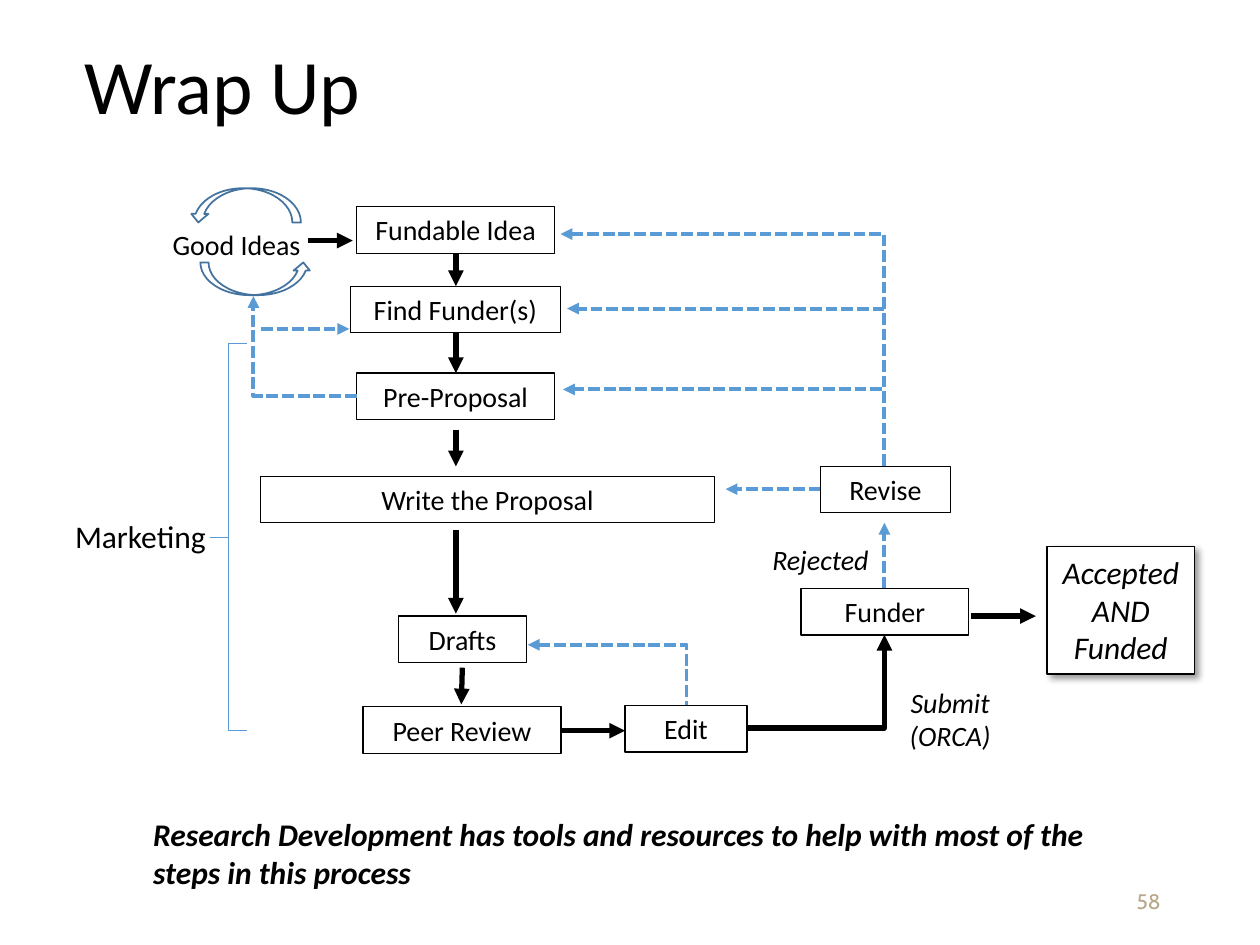
from lxml import etree
from pptx import Presentation
from pptx.dml.color import RGBColor
from pptx.enum.dml import MSO_LINE
from pptx.enum.shapes import MSO_CONNECTOR, MSO_SHAPE
from pptx.enum.text import MSO_ANCHOR, MSO_AUTO_SIZE, PP_ALIGN
from pptx.oxml import parse_xml
from pptx.oxml.ns import qn
from pptx.util import Cm, Pt

RECT, BRACE, ARC = MSO_SHAPE.RECTANGLE, MSO_SHAPE.LEFT_BRACE, MSO_SHAPE.CURVED_RIGHT_ARROW
STRAIGHT, ELBOW = MSO_CONNECTOR.STRAIGHT, MSO_CONNECTOR.ELBOW
DASH = MSO_LINE.SQUARE_DOT
TOP, MID = MSO_ANCHOR.TOP, MSO_ANCHOR.MIDDLE
LEFT, MIDDLE, RIGHT = PP_ALIGN.LEFT, PP_ALIGN.CENTER, PP_ALIGN.RIGHT
GROW, FIXED = MSO_AUTO_SIZE.SHAPE_TO_FIT_TEXT, MSO_AUTO_SIZE.NONE

BLACK, WHITE, BLUE, NAVY, TAN = "000000", "FFFFFF", "5B9BD5", "43739E", "B5A788"
SHADOW = (
    '<a:effectLst xmlns:a="http://schemas.openxmlformats.org/drawingml/2006/main">'
    '<a:outerShdw blurRad="50800" dist="38100" dir="2700000" algn="tl" rotWithShape="0">'
    '<a:srgbClr val="000000"><a:alpha val="40000"/></a:srgbClr>'
    '</a:outerShdw></a:effectLst>')


def color(code):
    return RGBColor.from_string(code)


class Flow:
    """Style and current slide, with one method per kind of element."""
    font = "Calibri"
    size = 16
    row = 0.94

    def __init__(self, slide):
        self.slide = slide
        self.shapes = slide.shapes

    def text(self, shape, words, align=MIDDLE, ink=BLACK, anchor=TOP,
             fit=GROW, wrap=True, space=None, **style):
        frame = shape.text_frame
        frame.word_wrap, frame.auto_size = wrap, fit
        frame.vertical_anchor = anchor
        para = frame.paragraphs[0]
        para.alignment, para.line_spacing = align, space
        run = para.add_run()
        run.text = words
        style = {"name": self.font, "size": self.size, **style}
        style["size"] = Pt(style["size"])
        for key, value in style.items():
            setattr(run.font, key, value)
        run.font.color.rgb = color(ink)

    def label(self, words, x, y, wide, high=row, **style):
        box = self.shapes.add_textbox(Cm(x), Cm(y), Cm(wide), Cm(high))
        self.text(box, words, **style)

    def shape(self, kind, x, y, wide, high, line=BLACK, width=0.75, fill=None, turn=0):
        item = self.shapes.add_shape(kind, Cm(x), Cm(y), Cm(wide), Cm(high))
        item.shadow.inherit = False
        item.rotation = turn
        if fill:
            item.fill.solid()
            item.fill.fore_color.rgb = color(fill)
        else:
            item.fill.background()
        if line:
            item.line.color.rgb = color(line)
            item.line.width = Pt(width)
        else:
            item.line.fill.background()
        return item

    def box(self, words, x, y, wide, high=row, style=None, **look):
        item = self.shape(RECT, x, y, wide, high, **look)
        self.text(item, words, **(style or {}))
        return item

    def arrow(self, x1, y1, x2, y2, dashed=False, bent=False, end="tailEnd"):
        kind = ELBOW if bent else STRAIGHT
        link = self.shapes.add_connector(kind, Cm(x1), Cm(y1), Cm(x2), Cm(y2))
        link.line.color.rgb = color(BLUE if dashed else BLACK)
        link.line.width = Pt(2.25 if dashed else 3)
        if dashed:
            link.line.dash_style = DASH
        props = link._element.spPr
        if bent:  # a single corner: across first, then up or down
            props.find(qn("a:prstGeom")).set("prst", "bentConnector2")
        etree.SubElement(props.find(qn("a:ln")), qn("a:" + end), type="triangle")
        etree.SubElement(props, qn("a:effectLst"))


def main():
    deck = Presentation()
    deck.slide_width, deck.slide_height = Cm(25.4), Cm(19.05)
    flow = Flow(deck.slides.add_slide(deck.slide_layouts[6]))

    # Title and page number
    flow.label("Wrap Up", 1.45, 0.64, 21.89, 2.34, align=LEFT, size=44,
               anchor=MID, fit=FIXED, space=0.9)
    flow.label("58", 17.93, 17.65, 5.72, 1.02, align=RIGHT, size=12,
               name="Cabin", ink=TAN, anchor=MID, fit=FIXED)

    # Cycle of ideas
    flow.shape(ARC, 4.83, 4.5, 0.66, 2.24, line=NAVY, width=1, turn=270)
    flow.shape(ARC, 4.6, 3.02, 0.69, 2.24, line=NAVY, width=1, turn=90)
    flow.label("Good Ideas", 3.23, 4.47, 3.4, align=LEFT)

    # Steps
    for words, x, y, wide, look in (
            ("Fundable Idea", 7.19, 4.17, 3.99, {}),
            ("Find Funder(s)", 7.06, 5.77, 4.24, {}),
            ("Pre-Proposal", 7.19, 7.52, 3.99, {"width": 1}),
            ("Write the Proposal", 5.26, 9.6, 9.14, {"width": 0.5}),
            ("Drafts", 8.03, 12.42, 2.59, {}),
            ("Peer Review", 7.32, 14.25, 3.99, {}),
            ("Edit", 12.6, 14.22, 2.46, {}),
            ("Funder", 16.15, 11.86, 3.38, {"fill": WHITE}),
            ("Revise", 16.54, 9.4, 2.62, {})):
        flow.box(words, x, y, wide, **look)

    # Outcomes
    slant = {"italic": True}
    flow.box("Submit (ORCA)", 17.96, 13.69, 2.39, 1.63, slant, line=None, fill=WHITE)
    flow.label("Rejected", 14.38, 10.82, 4.32, **slant)
    goal = flow.box("Accepted AND Funded", 21.11, 11.02, 2.97, 2.57,
                    {"size": 18, **slant}, fill=WHITE)
    props = goal._element.spPr
    props.remove(props.find(qn("a:effectLst")))
    props.append(parse_xml(SHADOW))

    # Forward arrows: down the spine, then across
    spine, loop = 9.19, 17.83
    for top, foot in ((5.11, 5.77), (6.71, 7.52), (8.66, 9.4), (10.69, 12.37)):
        flow.arrow(spine, top, spine, foot)
    flow.arrow(9.32, 13.46, 9.3, 14.2)
    for x1, x2, y in ((6.2, 7.11, 4.85), (11.3, 12.6, 14.73), (19.58, 20.88, 12.42)):
        flow.arrow(x1, y, x2, y)
    flow.arrow(15.06, 14.68, loop, 12.8, bent=True)

    # Feedback arrows
    for x1, x2, y in ((5.26, 7.04, 6.63), (loop, 11.43, 6.22),
                      (17.78, 11.35, 7.85), (16.54, 14.63, 9.86)):
        flow.arrow(x1, y, x2, y, dashed=True)
    flow.arrow(loop, 11.86, loop, 10.54, dashed=True)
    flow.arrow(7.19, 7.98, 5.11, 5.97, dashed=True, bent=True)
    for ends in ((10.64, 13, 13.84, 14.22), (11.3, 4.72, loop, 9.4)):
        flow.arrow(*ends, dashed=True, bent=True, end="headEnd")

    # Marketing span
    flow.label("Marketing", 1.24, 10.29, 3.18, 1.02, size=18, wrap=False)
    brace = flow.shape(BRACE, 4.24, 6.93, 0.74, 7.8, line=BLUE, width=0.5)
    brace.adjustments[0] = 0

    # Closing note
    flow.label("Research Development has tools and resources to help with most "
               "of the steps in this process", 2.84, 16.31, 19.56, 1.8,
               align=LEFT, size=18, bold=True, italic=True)

    deck.save("out.pptx")


if __name__ == "__main__":
    main()
